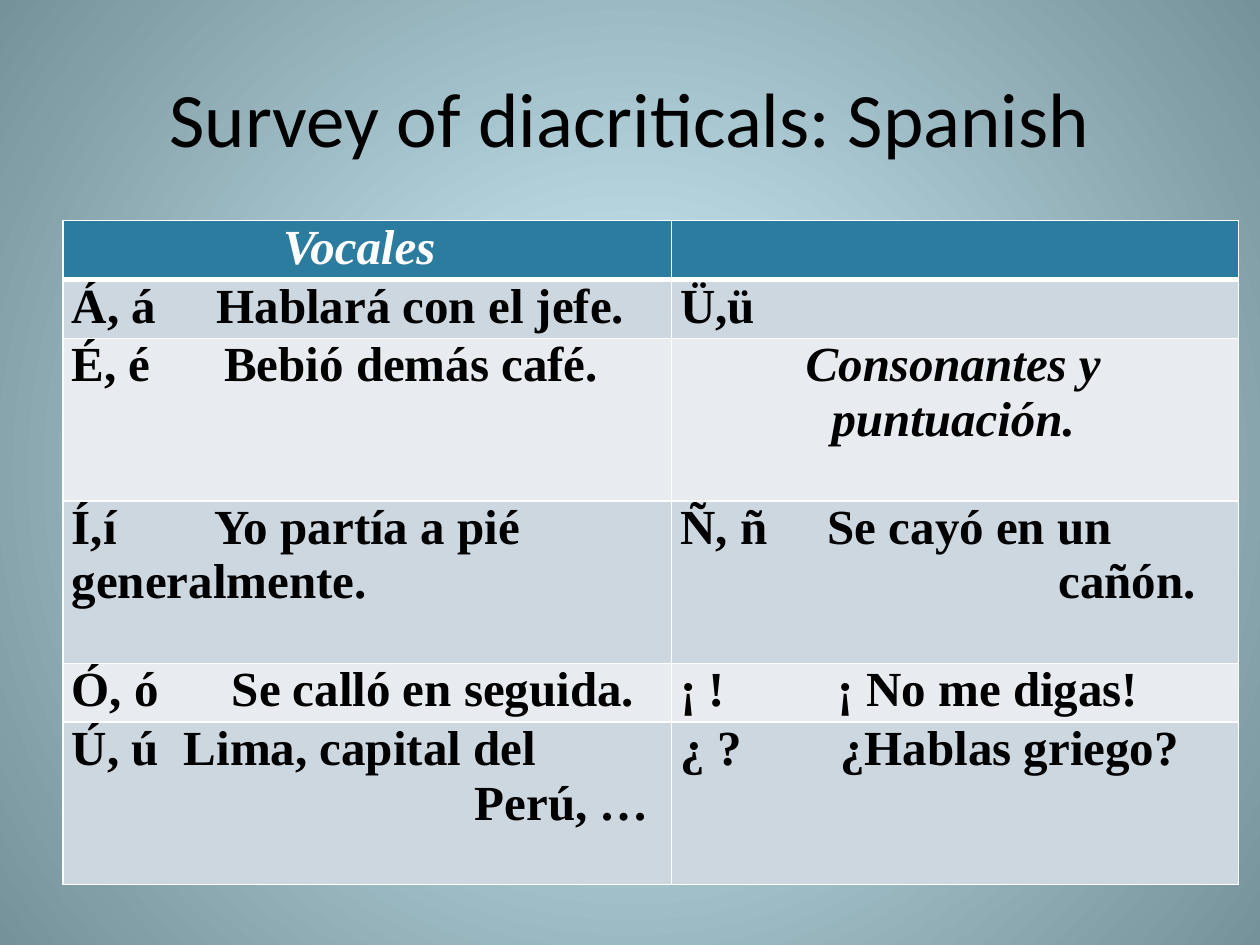
from lxml import etree
from pptx import Presentation
from pptx.dml.color import RGBColor
from pptx.enum.text import MSO_ANCHOR, PP_ALIGN
from pptx.oxml.ns import qn
from pptx.util import Inches, Pt

CENTER, LEFT = PP_ALIGN.CENTER, PP_ALIGN.LEFT
MIDDLE, TOP = MSO_ANCHOR.MIDDLE, MSO_ANCHOR.TOP

COLORS = {
    "glow": "D5F5FF", "edge": "75919A", "header": "2C7C9F",
    "odd": "CDD7DF", "even": "E8ECF0", "white": "FFFFFF", "black": "000000",
}
TITLE_FORMAT = {"name": "Calibri", "size": Pt(44)}
CELL_FORMAT = {"name": "Times New Roman", "size": Pt(28), "bold": True}
CELL_MARGINS = {
    "margin_left": Inches(0.07), "margin_right": Inches(0.1),
    "margin_top": 0, "margin_bottom": 0, "vertical_anchor": TOP,
}

COLUMN_WIDTHS = [4.83, 4.5]
LINE_HEIGHT = 0.43
ROW_LINES = [1, 1, 3, 3, 1, 3]
# Each cell holds (text, offset in inches) lines. The offset is the tab stop
# of a line with a tab, or the left indent of any other line.
CELLS = [
    [[("Vocales ", 0)], []],
    [[("Á, á\tHablará con el jefe.", 1.15)], [("Ü,ü", 0)]],
    [[("É, é\tBebió demás café.", 1.21)], [("Consonantes y puntuación.", 0)]],
    [[("Í,í\tYo partía a pié", 1.13), ("generalmente.", 0)],
     [("Ñ, ñ\tSe cayó en un", 1.17), ("cañón.", 3.0)]],
    [[("Ó, ó\tSe calló en seguida.", 1.27)], [("¡ !\t¡ No me digas!", 1.25)]],
    [[("Ú, ú\tLima, capital del", 0.89), ("Perú, …", 3.2)],
     [("¿ ?\t¿Hablas griego?", 1.27)]],
]
HEADINGS = {(0, 0), (2, 1)}


def color(name):
    return RGBColor.from_string(COLORS[name])


def set_all(target, values):
    for name, value in values.items():
        setattr(target, name, value)


def add_span(para, text, values, color_name):
    span = para.add_run()
    span.text = text
    set_all(span.font, values)
    span.font.color.rgb = color(color_name)


def paint_background(page):
    fill = page.background.fill
    fill.gradient()
    for stop, name in zip(fill.gradient_stops, ("glow", "edge")):
        stop.color.rgb = color(name)
    gradient = page.element.find(".//" + qn("a:gradFill"))
    gradient.remove(gradient.find(qn("a:lin")))
    radial = etree.SubElement(gradient, qn("a:path"), path="circle")
    etree.SubElement(radial, qn("a:fillToRect"),
                     dict.fromkeys("ltrb", "50000"))


def add_title(page, left, top, width, height):
    box = page.shapes.add_textbox(left, top, width, height)
    set_all(box.text_frame, {"word_wrap": True, "vertical_anchor": MIDDLE})
    para = box.text_frame.paragraphs[0]
    para.alignment = CENTER
    add_span(para, "Survey of diacriticals: Spanish", TITLE_FORMAT, "black")


def set_offset(para, text, offset):
    properties = para._p.get_or_add_pPr()
    if "\t" in text:
        stops = etree.SubElement(properties, qn("a:tabLst"))
        etree.SubElement(stops, qn("a:tab"), pos=str(Inches(offset)), algn="l")
    elif offset:
        properties.set("marL", str(Inches(offset)))


def set_borders(cell, bottom_width):
    """Insert the border lines ahead of the fill, as the schema orders them."""
    properties = cell._tc.get_or_add_tcPr()
    widths = {"a:lnL": 1, "a:lnR": 1, "a:lnT": 1, "a:lnB": bottom_width}
    for index, (tag, width) in enumerate(widths.items()):
        line = etree.Element(qn(tag), w=str(Pt(width)))
        fill = etree.SubElement(line, qn("a:solidFill"))
        etree.SubElement(fill, qn("a:srgbClr"), val=COLORS["white"])
        properties.insert(index, line)


def fill_cell(cell, lines, row, heading):
    set_all(cell, CELL_MARGINS)
    cell.fill.solid()
    band = "odd" if row % 2 else "even"
    cell.fill.fore_color.rgb = color(band if row else "header")
    set_borders(cell, 1 if row else 3)
    for index, (text, offset) in enumerate(lines):
        frame = cell.text_frame
        para = frame.add_paragraph() if index else frame.paragraphs[0]
        para.alignment = CENTER if heading else LEFT
        set_offset(para, text, offset)
        add_span(para, text, {**CELL_FORMAT, "italic": heading},
                 "black" if row else "white")


def add_diacritics_table(page, left, top, width, height):
    table = page.shapes.add_table(len(CELLS), len(COLUMN_WIDTHS),
                                  left, top, width, height).table
    set_all(table, {"first_row": False, "horz_banding": False})
    for column, share in zip(table.columns, COLUMN_WIDTHS):
        column.width = int(width * share / sum(COLUMN_WIDTHS))
    for row, count in zip(table.rows, ROW_LINES):
        row.height = int(height * count / sum(ROW_LINES))
    for row, entries in enumerate(CELLS):
        for column, lines in enumerate(entries):
            fill_cell(table.cell(row, column), lines, row,
                      (row, column) in HEADINGS)


def main():
    deck = Presentation()
    deck.slide_width, deck.slide_height = Inches(10), Inches(7.5)
    page = deck.slides.add_slide(deck.slide_layouts[6])
    paint_background(page)
    add_title(page, Inches(0.5), Inches(0.3), Inches(9), Inches(1.25))
    add_diacritics_table(page, Inches(0.5), Inches(1.75),
                         Inches(sum(COLUMN_WIDTHS)),
                         Inches(LINE_HEIGHT * sum(ROW_LINES)))
    deck.save("out.pptx")


if __name__ == "__main__":
    main()
